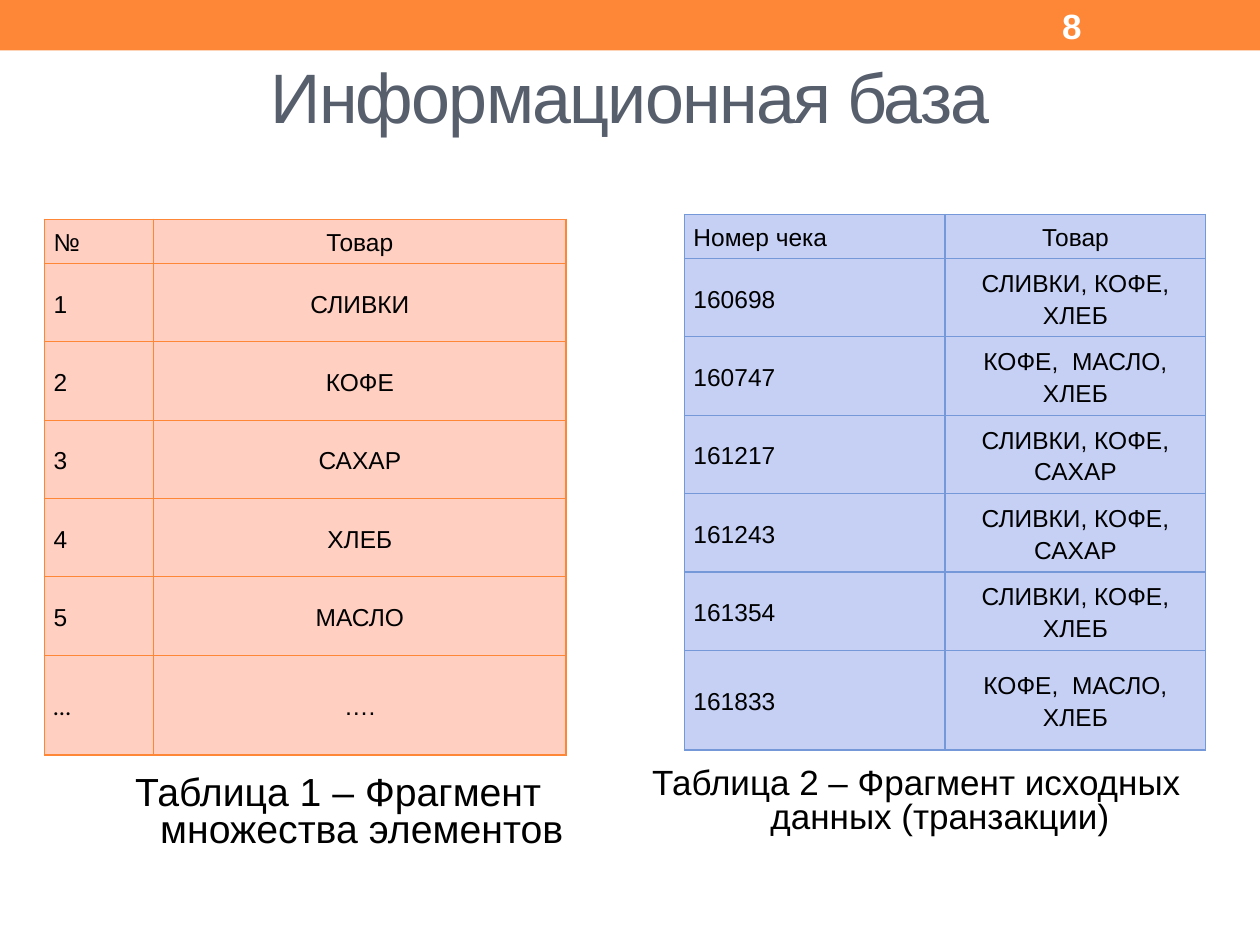
from lxml.etree import SubElement
from pptx import Presentation
from pptx.dml.color import RGBColor
from pptx.enum.shapes import MSO_SHAPE as Shape
from pptx.enum.text import MSO_ANCHOR as Anchor, PP_ALIGN as Align
from pptx.oxml.ns import qn
from pptx.util import Cm, Pt

ORANGE, BLUE = "FE8637", "7598D9"
PALE_ORANGE, PALE_BLUE = "FFCFC2", "C5D0F4"
ROW_HEIGHTS = [0.89] + [1.58] * 5 + [2.01]

PRODUCTS = [
    ("№", "Товар"),
    ("1", "СЛИВКИ"),
    ("2", "КОФЕ"),
    ("3", "САХАР"),
    ("4", "ХЛЕБ"),
    ("5", "МАСЛО"),
    ("…", "…."),
]
RECEIPTS = [
    ("Номер чека", "Товар"),
    ("160698", "СЛИВКИ, КОФЕ, ХЛЕБ"),
    ("160747", "КОФЕ,  МАСЛО, ХЛЕБ"),
    ("161217", "СЛИВКИ, КОФЕ, САХАР"),
    ("161243", "СЛИВКИ, КОФЕ, САХАР"),
    ("161354", "СЛИВКИ, КОФЕ, ХЛЕБ"),
    ("161833", "КОФЕ,  МАСЛО, ХЛЕБ"),
]


def color(value):
    return RGBColor.from_string(value)


def write(frame, text, size=14, fill="000000", font="Arial", bold=False,
          align=Align.LEFT, line_spacing=1.0, before=0, hanging=0, tracking=0):
    paragraph = frame.paragraphs[0]
    paragraph.alignment = align
    paragraph.line_spacing = line_spacing
    paragraph.space_before = Pt(before)
    if hanging:
        properties = paragraph._p.get_or_add_pPr()
        properties.set("marL", str(Cm(hanging)))
        properties.set("indent", str(-Cm(hanging)))
    run = paragraph.add_run()
    run.text = text
    run.font.name = font
    run.font.size = Pt(size)
    run.font.bold = bold
    run.font.color.rgb = color(fill)
    if tracking:
        run._r.get_or_add_rPr().set("spc", str(tracking))


class SlideBuilder:
    def __init__(self, slide):
        self.slide = slide

    def bar(self, left, top, width, height, fill):
        shape = self.slide.shapes.add_shape(
            Shape.RECTANGLE, Cm(left), Cm(top), Cm(width), Cm(height))
        shape.shadow.inherit = False
        shape.fill.solid()
        shape.fill.fore_color.rgb = color(fill)
        shape.line.fill.background()

    def text(self, left, top, width, height, text, anchor=Anchor.MIDDLE, **style):
        box = self.slide.shapes.add_textbox(Cm(left), Cm(top), Cm(width), Cm(height))
        frame = box.text_frame
        frame.word_wrap = True
        frame.vertical_anchor = anchor
        write(frame, text, **style)

    def caption(self, left, top, text, size):
        self.text(left, top, 11.71, 1.78, text, anchor=Anchor.TOP, size=size,
                  align=Align.CENTER, line_spacing=0.8, before=size * 0.2, hanging=0.95)

    def border(self, cell, line_color):
        properties = cell._tc.get_or_add_tcPr()
        for side in ("lnL", "lnR", "lnT", "lnB"):
            line = SubElement(properties, qn(f"a:{side}"), w=str(Pt(0.75)))
            solid = SubElement(line, qn("a:solidFill"))
            SubElement(solid, qn("a:srgbClr"), val=line_color)

    def table(self, left, top, widths, rows, fill, line_color):
        table = self.slide.shapes.add_table(
            len(rows), len(widths), Cm(left), Cm(top),
            Cm(sum(widths)), Cm(sum(ROW_HEIGHTS))).table
        for column, width in zip(table.columns, widths):
            column.width = Cm(width)
        for row, height, values in zip(table.rows, ROW_HEIGHTS, rows):
            row.height = Cm(height)
            for cell, value, align in zip(row.cells, values, (Align.LEFT, Align.CENTER)):
                cell.margin_left = cell.margin_right = Cm(0.19)
                cell.margin_top = cell.margin_bottom = 0
                cell.vertical_anchor = Anchor.MIDDLE
                self.border(cell, line_color)
                cell.fill.solid()
                cell.fill.fore_color.rgb = color(fill)
                write(cell.text_frame, value, align=align, line_spacing=1.15,
                      font="Calibri" if value == "…" else "Arial")


def main():
    presentation = Presentation()
    presentation.slide_width, presentation.slide_height = Cm(25.4), Cm(19.05)
    builder = SlideBuilder(presentation.slides.add_slide(presentation.slide_layouts[6]))

    builder.bar(0, 0, 25.4, 1.02, ORANGE)
    builder.text(1.27, 0.33, 22.86, 3.18, "Информационная база", size=40,
                 fill="575F6D", align=Align.CENTER, tracking=-100)
    builder.text(21.16, 0.05, 2.97, 0.91, "8", size=20, fill="FFFFFF", bold=True)
    builder.caption(12.62, 15.37, "Таблица 2 – Фрагмент исходных данных (транзакции)", 20)
    builder.table(13.79, 4.32, (5.26, 5.26), RECEIPTS, PALE_BLUE, BLUE)
    builder.table(0.89, 4.42, (2.21, 8.31), PRODUCTS, PALE_ORANGE, ORANGE)
    builder.caption(0.97, 15.52, "Таблица 1 – Фрагмент множества элементов", 22.4)

    presentation.save("out.pptx")


if __name__ == "__main__":
    main()
